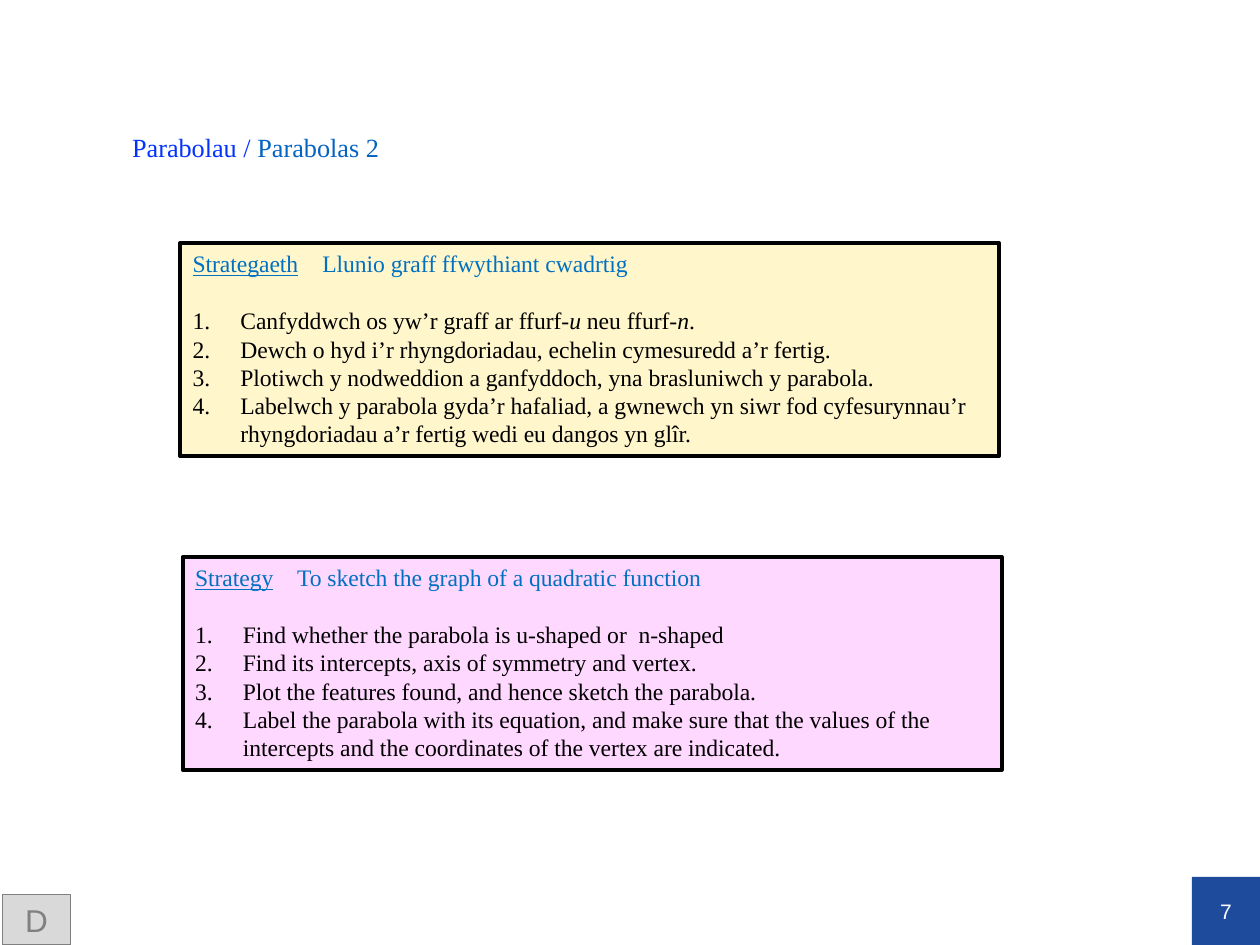
"""Build the bilingual slide on the strategy for sketching parabolas."""
import dataclasses

import lxml.etree
import pptx
import pptx.dml.color
import pptx.enum.shapes
import pptx.enum.text
import pptx.oxml.ns
import pptx.util


@dataclasses.dataclass(frozen=True)
class Theme:
    serif: str = "Times New Roman"
    sans: str = "Arial"
    title_size: float = 15
    body_size: float = 13.5
    number_size: float = 12
    badge_size: float = 18
    welsh_title: str = "0432FF"
    english_title: str = "0563C1"
    heading: str = "0070C0"
    ink: str = "000000"
    cream: str = "FFF6CC"
    magenta: str = "FF40FF"
    navy: str = "1E4B9B"
    white: str = "FFFFFF"
    grey: str = "808080"
    light_grey: str = "D9D9D9"


THEME = Theme()
WIDTH, HEIGHT = 10, 7.5
PANEL_WIDTH, PANEL_HEIGHT = 0.65 * WIDTH, 1.69
CORNER = 0.54
BADGE_HEIGHT = 0.4
STEP_INDENT = 0.38
HEADING_GAP = 16.2

TITLE = [("Parabolau / ", THEME.welsh_title), ("Parabolas 2", THEME.english_title)]
PANELS = [
    {
        "label": "Strategy",
        "goal": "To sketch the graph of a quadratic function",
        "steps": [
            ["Find whether the parabola is u-shaped or  n-shaped"],
            ["Find its intercepts, axis of symmetry and vertex."],
            ["Plot the features found, and hence sketch the parabola."],
            ["Label the parabola with its equation, and make sure that the values of the "
             "intercepts and the coordinates of the vertex are indicated."],
        ],
        "corner": (1.45, 4.42), "tab": 0.81, "fill": THEME.magenta, "opacity": 20,
    },
    {
        "label": "Strategaeth",
        "goal": "Llunio graff ffwythiant cwadrtig",
        "steps": [
            ["Canfyddwch os yw’r graff ar ffurf-", "u", " neu ffurf-", "n", "."],
            ["Dewch o hyd i’r rhyngdoriadau, echelin cymesuredd a’r fertig."],
            ["Plotiwch y nodweddion a ganfyddoch, yna brasluniwch y parabola."],
            ["Labelwch y parabola gyda’r hafaliad, a gwnewch yn siwr fod cyfesurynnau’r "
             "rhyngdoriadau a’r fertig wedi eu dangos yn glîr."],
        ],
        "corner": (1.43, 1.93), "tab": 1.03, "fill": THEME.cream, "opacity": 100,
    },
]


def color(value):
    return pptx.dml.color.RGBColor.from_string(value)


def add_element(parent, tag, **attributes):
    element = lxml.etree.SubElement(parent, pptx.oxml.ns.qn(tag))
    for name, value in attributes.items():
        element.set(name, str(value))
    return element


def add_run(paragraph, text, size, ink, font=THEME.serif, underline=False, italic=False):
    run = paragraph.add_run()
    run.text = text
    run.font.name = font
    run.font.size = pptx.util.Pt(size)
    run.font.color.rgb = color(ink)
    run.font.underline = underline
    run.font.italic = italic


def add_box(slide, left, top, width, height, fill, line=None, line_width=0):
    shape = slide.shapes.add_shape(
        pptx.enum.shapes.MSO_SHAPE.RECTANGLE,
        *(pptx.util.Inches(length) for length in (left, top, width, height)))
    shape.shadow.inherit = False
    shape.fill.solid()
    shape.fill.fore_color.rgb = color(fill)
    if line:
        shape.line.color.rgb = color(line)
        shape.line.width = pptx.util.Pt(line_width)
    else:
        shape.line.fill.background()
    shape.text_frame.word_wrap = True
    return shape


def add_label(shape, text, size, ink):
    shape.text_frame.vertical_anchor = pptx.enum.text.MSO_ANCHOR.MIDDLE
    paragraph = shape.text_frame.paragraphs[0]
    paragraph.alignment = pptx.enum.text.PP_ALIGN.CENTER
    add_run(paragraph, text, size, ink, THEME.sans)


def add_title(slide):
    box = slide.shapes.add_textbox(
        *(pptx.util.Inches(length) for length in (0.95, 1.02, 2.24, 0.33)))
    box.text_frame.word_wrap = True
    paragraph = box.text_frame.paragraphs[0]
    paragraph.line_spacing = 0.9
    for text, ink in TITLE:
        add_run(paragraph, text, THEME.title_size, ink)


def add_step(frame, pieces):
    paragraph = frame.add_paragraph()
    paragraph.alignment = pptx.enum.text.PP_ALIGN.LEFT
    properties = paragraph._p.get_or_add_pPr()
    indent = pptx.util.Inches(STEP_INDENT)
    properties.set("marL", str(indent))
    properties.set("indent", str(-indent))
    add_element(properties, "a:buFont", typeface="+mj-lt")
    add_element(properties, "a:buAutoNum", type="arabicPeriod")
    for index, text in enumerate(pieces):
        add_run(paragraph, text, THEME.body_size, THEME.ink, italic=index % 2 == 1)


def add_panel(slide, panel):
    shape = add_box(slide, *panel["corner"], PANEL_WIDTH, PANEL_HEIGHT,
                    panel["fill"], THEME.ink, 2.25)
    if panel["opacity"] < 100:
        fill_color = shape._element.spPr.find(
            pptx.oxml.ns.qn("a:solidFill")).find(pptx.oxml.ns.qn("a:srgbClr"))
        add_element(fill_color, "a:alpha", val=panel["opacity"] * 1000)
    frame = shape.text_frame
    frame.vertical_anchor = pptx.enum.text.MSO_ANCHOR.TOP
    frame.auto_size = pptx.enum.text.MSO_AUTO_SIZE.SHAPE_TO_FIT_TEXT
    heading = frame.paragraphs[0]
    tabs = add_element(heading._p.get_or_add_pPr(), "a:tabLst")
    add_element(tabs, "a:tab", pos=pptx.util.Inches(panel["tab"]), algn="l")
    heading.alignment = pptx.enum.text.PP_ALIGN.LEFT
    heading.space_after = pptx.util.Pt(HEADING_GAP)
    add_run(heading, panel["label"], THEME.body_size, THEME.heading, underline=True)
    add_run(heading, "\t" + panel["goal"], THEME.body_size, THEME.heading)
    for pieces in panel["steps"]:
        add_step(frame, pieces)


def main():
    presentation = pptx.Presentation()
    presentation.slide_width = pptx.util.Inches(WIDTH)
    presentation.slide_height = pptx.util.Inches(HEIGHT)
    slide = presentation.slides.add_slide(presentation.slide_layouts[6])
    number = add_box(slide, WIDTH - CORNER, HEIGHT - CORNER, CORNER, CORNER, THEME.navy)
    frame = number.text_frame
    frame.margin_left = frame.margin_right = frame.margin_top = frame.margin_bottom = 0
    add_label(number, "7", THEME.number_size, THEME.white)
    add_title(slide)
    for panel in PANELS:
        add_panel(slide, panel)
    badge = add_box(slide, 0.02, HEIGHT - BADGE_HEIGHT, CORNER, BADGE_HEIGHT,
                    THEME.light_grey, THEME.grey, 0.75)
    add_label(badge, "D", THEME.badge_size, THEME.grey)
    presentation.save("out.pptx")


if __name__ == "__main__":
    main()
